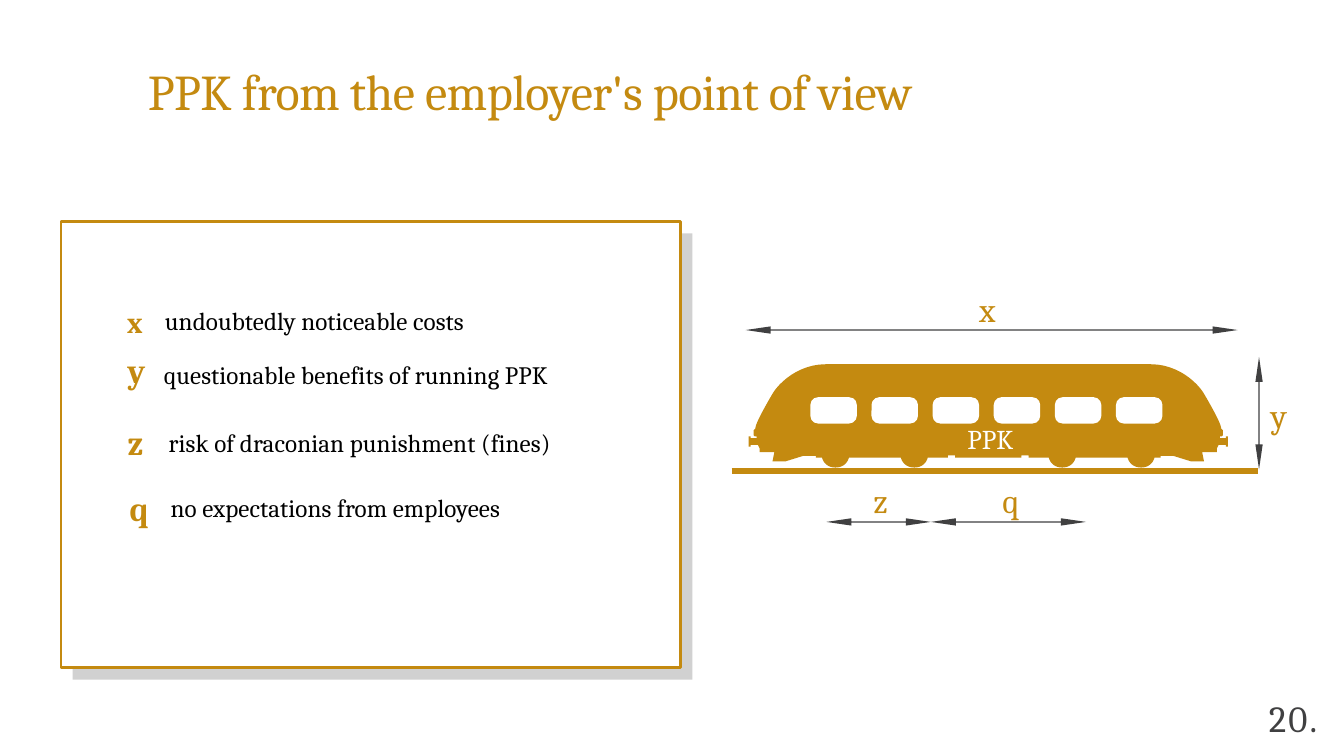
from lxml import etree
from pptx import Presentation
from pptx import util as u
from pptx.dml.color import RGBColor
from pptx.enum import shapes, text
from pptx.oxml.ns import qn

GOLD = RGBColor(0xC4, 0x8A, 0x10)
GRAPHITE = RGBColor(0x40, 0x40, 0x41)
SHADE = RGBColor(0xD1, 0xD1, 0xD1)
WHITE = RGBColor(0xFF, 0xFF, 0xFF)
BLACK = RGBColor(0, 0, 0)
FONT = "Cambria"

TITLE = "PPK from the employer's point of view"
TITLE_BOX = (2.42, 0.97, 13.41, 1.01)
PANEL_BOX = (1, 3.62, 10.14, 7.3)
SHADE_BOX = (1.19, 3.82, 10.14, 7.3)

# left, top, width, height, text, size, colour, bold, letter spacing in points
LABELS = [
    (16.02, 4.7, 0.31, 0.7, "x", 40, GOLD, False, 0.2),
    (20.79, 6.43, 0.31, 0.7, "y", 40, GOLD, False, 0.2),
    (14.29, 7.82, 0.31, 0.7, "z", 40, GOLD, False, 0.1),
    (16.4, 7.82, 0.31, 0.7, "q", 40, GOLD, False, 0.2),
    (2.09, 5.7, 0.31, 0.69, "y", 40, GOLD, True, 0.2),
    (2.09, 6.87, 0.31, 0.69, "z", 40, GOLD, True, 0.1),
    (2.12, 7.95, 0.31, 0.69, "q", 40, GOLD, True, 0.2),
    (2.68, 5.86, 7.49, 0.51, "questionable benefits of running PPK", 29.5, BLACK, False, 0.1),
    (2.76, 6.98, 7.7, 0.49, "risk of draconian punishment (fines)", 29.5, BLACK, False, 0.1),
    (2.79, 8.04, 7.85, 0.51, "no expectations from employees", 29.5, BLACK, False, 0.1),
    (15.83, 6.89, 1.29, 0.55, "PPK", 32, WHITE, False, -0.1),
]
COSTS_BOX = (2.08, 4.6, 6.94, 0.69)
COSTS_KEY, COSTS = "x", "undoubtedly noticeable costs"
PAGE_BOX = (20.76, 11.41, 0.89, 0.7)
PAGE = "20."

# Left half of the train, roof to floor: pairs are corners, sixes are Bezier curves
CENTRE = 16.17
WHEELS = (13.67, 14.96)
ROOF_TO_BUMPER = [
    (CENTRE, 5.96), (13.51, 5.96),
    (13.07, 5.96, 12.74, 6.26, 12.63, 6.46),
    (12.42, 6.82, 12.36, 6.96, 12.36, 7.01),
    (12.33, 7.04), (12.33, 7.12), (12.35, 7.14), (12.38, 7.14), (12.38, 7.17),
    (12.28, 7.17), (12.28, 7.14), (12.25, 7.14), (12.25, 7.31), (12.28, 7.31),
    (12.28, 7.28), (12.4, 7.28), (12.43, 7.34), (12.43, 7.4), (12.67, 7.4),
    (12.64, 7.55), (12.85, 7.55), (13.14, 7.46), (13.35, 7.46), (13.35, 7.49),
]
FLOOR = [(15.51, 7.49), (15.51, 7.45), (15.63, 7.45), (15.63, 7.49), (CENTRE, 7.49)]

WINDOWS, WINDOW_PITCH = 6, 1
WINDOW_BOX = (13.26, 6.5, 0.76, 0.43)
TRACK = (11.97, 20.59, 7.71)  # from, to, height on the slide
ARROWS = [  # from, to
    ((12.2, 5.4), (20.25, 5.4)),
    ((13.52, 8.54), (15.23, 8.54)),
    ((15.23, 8.54), (17.77, 8.54)),
    ((20.6, 5.84), (20.6, 7.68)),
]
HEAD_LENGTH, HEAD_HALF, SHAFT_HALF = 0.41, 0.06, 0.01


def inches(box):
    return [u.Inches(value) for value in box]


def add_outline(slide, corners, colour):
    points = [tuple(inches(corner)) for corner in corners]
    builder = slide.shapes.build_freeform(*points[0])
    builder.add_line_segments(points[1:], close=True)
    outline = builder.convert_to_shape()
    paint(outline, colour)


def paint(shape, fill, line=None):
    shape.shadow.inherit = False
    shape.fill.solid()
    shape.fill.fore_color.rgb = fill
    if line is None:
        shape.line.fill.background()
    else:
        shape.line.color.rgb = line
        shape.line.width = u.Pt(3.3)


def add_block(slide, kind, box, fill, line=None):
    block = slide.shapes.add_shape(kind, *inches(box))
    paint(block, fill, line)
    return block


def flatten(steps, pieces=12):
    """Turn corners and Bezier curves into corners only."""
    corners = []
    for step in steps:
        if len(step) == 2:
            corners.append(step)
            continue
        controls = [corners[-1], step[:2], step[2:4], step[4:]]
        for i in range(1, pieces + 1):
            t = i / pieces
            weights = ((1 - t) ** 3, 3 * t * (1 - t) ** 2, 3 * t * t * (1 - t), t ** 3)
            corners.append(tuple(sum(w * c[axis] for w, c in zip(weights, controls))
                                 for axis in (0, 1)))
    return corners


def train_outline():
    steps = list(ROOF_TO_BUMPER)
    for hub in WHEELS:
        steps += [(hub - 0.22, 7.49),
                  (hub - 0.19, 7.59, hub - 0.11, 7.65, hub, 7.65),
                  (hub + 0.11, 7.65, hub + 0.19, 7.59, hub + 0.22, 7.49)]
    left = flatten(steps + FLOOR)
    return left + [(2 * CENTRE - x, y) for x, y in reversed(left)]


def arrow_outline(start, end):
    """Slim two-headed arrow, horizontal or vertical."""
    (x, y), upright = start, start[0] == end[0]
    length = end[1] - y if upright else end[0] - x
    near, far = HEAD_LENGTH, length - HEAD_LENGTH
    side = [(0, 0), (near, HEAD_HALF), (near, SHAFT_HALF),
            (far, SHAFT_HALF), (far, HEAD_HALF), (length, 0)]
    outline = side + [(along, -across) for along, across in side[-2:0:-1]]
    if upright:
        return [(x + across, y + along) for along, across in outline]
    return [(x + along, y + across) for along, across in outline]


def prepare(frame):
    """Strip margins and return the first paragraph."""
    frame.margin_left = frame.margin_right = frame.margin_bottom = 0
    frame.margin_top = u.Inches(0.02)
    frame.word_wrap = True
    frame.auto_size = text.MSO_AUTO_SIZE.NONE
    frame.vertical_anchor = text.MSO_ANCHOR.TOP
    paragraph = frame.paragraphs[0]
    paragraph.alignment = text.PP_ALIGN.LEFT
    paragraph.space_before = u.Pt(1.4)
    return paragraph


def add_paragraph_box(slide, box):
    return prepare(slide.shapes.add_textbox(*inches(box)).text_frame)


def style(font, size, colour, bold=False):
    font.name, font.size, font.bold = FONT, u.Pt(size), bold
    font.color.rgb = colour


def write(paragraph, words, size, colour, bold=False, spacing=0):
    run = paragraph.add_run()
    run.text = words
    style(paragraph.font, size, colour, bold)
    run._r.get_or_add_rPr().set("spc", str(round(spacing * 100)))


def add_costs_row(slide):
    paragraph = add_paragraph_box(slide, COSTS_BOX)
    paragraph.line_spacing, paragraph.space_before = 0.98, u.Pt(2.5)
    properties = paragraph._p.get_or_add_pPr()
    hang = u.Inches(0.62)
    properties.set("marL", str(hang))
    properties.set("indent", str(-hang))
    stops = etree.SubElement(properties, qn("a:tabLst"))
    etree.SubElement(stops, qn("a:tab"), pos=str(hang), algn="l")
    key, costs = paragraph.add_run(), paragraph.add_run()
    key.text, costs.text = COSTS_KEY + "\t", COSTS
    style(key.font, 60, GOLD, True)
    style(costs.font, 29.5, BLACK)
    key._r.get_or_add_rPr().set("baseline", "-7000")
    costs._r.get_or_add_rPr().set("spc", "10")


def main():
    deck = Presentation()
    deck.slide_width, deck.slide_height = u.Inches(21.99), u.Inches(12.37)
    slide = deck.slides.add_slide(deck.slide_layouts[5])
    kinds = shapes.MSO_SHAPE

    title = slide.shapes.title
    title.left, title.top, title.width, title.height = inches(TITLE_BOX)
    write(prepare(title.text_frame), TITLE, 59, GOLD, spacing=-0.6)

    add_block(slide, kinds.RECTANGLE, SHADE_BOX, SHADE)
    add_block(slide, kinds.RECTANGLE, PANEL_BOX, WHITE, GOLD)

    add_outline(slide, train_outline(), GOLD)
    left, top, width, height = WINDOW_BOX
    for i in range(WINDOWS):
        window = add_block(slide, kinds.ROUNDED_RECTANGLE,
                           (left + i * WINDOW_PITCH, top, width, height), WHITE)
        window.adjustments[0] = 0.29

    start, end, level = inches(TRACK)
    track = slide.shapes.add_connector(shapes.MSO_CONNECTOR.STRAIGHT, start, level, end, level)
    track.line.color.rgb, track.line.width = GOLD, u.Pt(6.38)
    etree.SubElement(track._element.spPr, qn("a:effectLst"))

    for ends in ARROWS:
        add_outline(slide, arrow_outline(*ends), GRAPHITE)

    add_costs_row(slide)
    for *box, words, size, colour, bold, spacing in LABELS:
        write(add_paragraph_box(slide, box), words, size, colour, bold, spacing)
    page = add_paragraph_box(slide, PAGE_BOX)
    page.line_spacing = u.Pt(48.4)
    write(page, PAGE, 43.5, GRAPHITE, spacing=2.6)

    deck.save("out.pptx")


if __name__ == "__main__":
    main()
